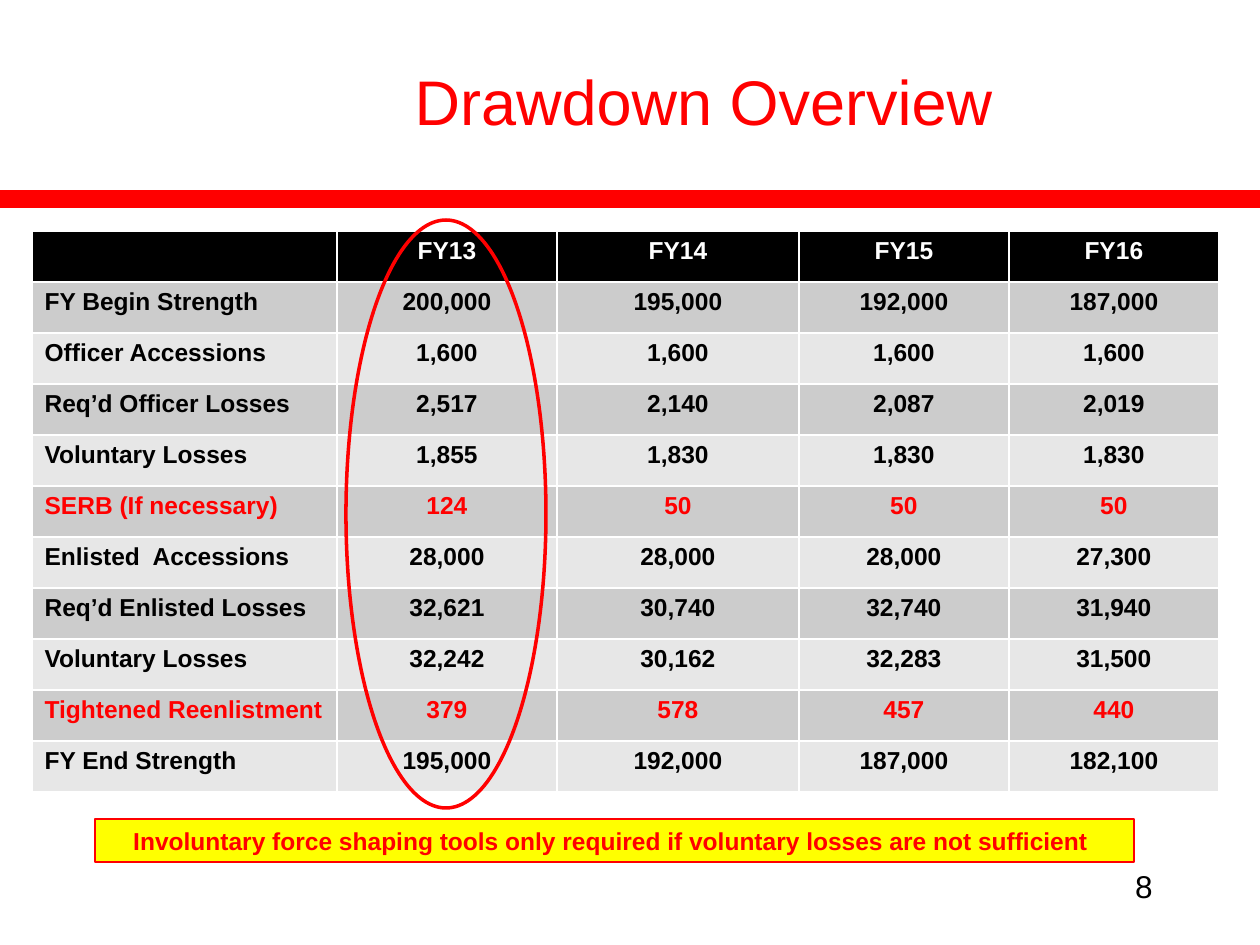
from typing import NamedTuple

from lxml import etree
from pptx import Presentation
from pptx import util as u
from pptx.dml.color import RGBColor
from pptx.enum import shapes, text

RED = RGBColor(0xFF, 0x00, 0x00)
YELLOW = RGBColor(0xFF, 0xFF, 0x00)
BLACK = RGBColor(0x00, 0x00, 0x00)
WHITE = RGBColor(0xFF, 0xFF, 0xFF)
DARK_BAND = RGBColor(0xCC, 0xCC, 0xCC)
LIGHT_BAND = RGBColor(0xE7, 0xE7, 0xE7)

PX_PER_INCH = 126
SLIDE_W, SLIDE_H = 1260, 945
ROW_H = 51
COL_WIDTHS = (305, 220, 242, 210, 210)
A_NS = "http://schemas.openxmlformats.org/drawingml/2006/main"
LEFT, CENTER, RIGHT = (text.PP_ALIGN.LEFT, text.PP_ALIGN.CENTER,
                       text.PP_ALIGN.RIGHT)


class Box(NamedTuple):
    x: int
    y: int
    w: int
    h: int


class Row(NamedTuple):
    label: str
    values: tuple[str, ...]
    color: RGBColor = BLACK


HEADER = Row("", ("FY13", "FY14", "FY15", "FY16"), WHITE)
ROWS = (
    Row("FY Begin Strength", ("200,000", "195,000", "192,000", "187,000")),
    Row("Officer Accessions", ("1,600", "1,600", "1,600", "1,600")),
    Row("Req’d Officer Losses", ("2,517", "2,140", "2,087", "2,019")),
    Row("Voluntary Losses", ("1,855", "1,830", "1,830", "1,830")),
    Row("SERB (If necessary)", ("124", "50", "50", "50"), RED),
    Row("Enlisted  Accessions", ("28,000", "28,000", "28,000", "27,300")),
    Row("Req’d Enlisted Losses", ("32,621", "30,740", "32,740", "31,940")),
    Row("Voluntary Losses", ("32,242", "30,162", "32,283", "31,500")),
    Row("Tightened Reenlistment", ("379", "578", "457", "440"), RED),
    Row("FY End Strength", ("195,000", "192,000", "187,000", "182,100")),
)


def px(n: int) -> u.Emu:
    return u.Emu(round(n * 914400 / PX_PER_INCH))


def emu(box: Box) -> list[u.Emu]:
    return [px(n) for n in box]


def write(tf, content: str, size: int, color: RGBColor, align,
          bold: bool = False) -> None:
    p = tf.paragraphs[0]
    p.alignment = align
    r = p.add_run()
    r.text = content
    fmt = {"name": "Arial", "size": u.Pt(size), "bold": bold}
    for name, value in fmt.items():
        setattr(r.font, name, value)
    r.font.color.rgb = color


def add_title(s, box: Box, content: str) -> None:
    sp = s.shapes.title
    for name, value in zip(("left", "top", "width", "height"), emu(box)):
        setattr(sp, name, value)
    sp.text_frame.vertical_anchor = text.MSO_ANCHOR.MIDDLE
    write(sp.text_frame, content, 36, RED, CENTER)


def add_rule(s, y: int) -> None:
    """Draw the red bar across the full slide width."""
    line = s.shapes.add_connector(shapes.MSO_CONNECTOR.STRAIGHT,
                                  0, px(y), px(SLIDE_W), px(y))
    line.line.color.rgb = RED
    line.line.width = u.Pt(10)
    etree.SubElement(line._element.spPr, f"{{{A_NS}}}effectLst")


def add_strength_table(s, x: int, y: int) -> None:
    rows = (HEADER, *ROWS)
    box = Box(x, y, sum(COL_WIDTHS), ROW_H * len(rows))
    table = s.shapes.add_table(len(rows), len(COL_WIDTHS), *emu(box)).table
    for col, width in zip(table.columns, COL_WIDTHS):
        col.width = px(width)
    for i, row in enumerate(rows):
        table.rows[i].height = px(ROW_H)
        band = BLACK if i == 0 else DARK_BAND if i % 2 else LIGHT_BAND
        for j, content in enumerate((row.label, *row.values)):
            cell = table.cell(i, j)
            cell.fill.solid()
            cell.fill.fore_color.rgb = band
            if content:
                write(cell.text_frame, content, 14, row.color,
                      CENTER if j else LEFT, bold=True)


def add_outlined(s, kind, box: Box, width: float,
                 fill: RGBColor | None = None):
    sp = s.shapes.add_shape(kind, *emu(box))
    sp.shadow.inherit = False
    if fill is None:
        sp.fill.background()
    else:
        sp.fill.solid()
        sp.fill.fore_color.rgb = fill
    sp.line.color.rgb = RED
    sp.line.width = u.Pt(width)
    return sp


def add_page_number(s, box: Box, number: str) -> None:
    tf = s.shapes.add_textbox(*emu(box)).text_frame
    tf.word_wrap = True
    write(tf, number, 18, BLACK, RIGHT)


def main() -> None:
    prs = Presentation()
    prs.slide_width, prs.slide_height = px(SLIDE_W), px(SLIDE_H)
    s = prs.slides.add_slide(prs.slide_layouts[5])
    add_rule(s, 199)
    add_title(s, Box(168, 21, 1071, 158), "Drawdown Overview")
    add_strength_table(s, 32, 231)
    add_page_number(s, Box(903, 861, 262, 63), "8")
    note = add_outlined(s, shapes.MSO_SHAPE.RECTANGLE,
                        Box(95, 819, 1039, 43), 0.75, YELLOW)
    write(note.text_frame,
          "Involuntary force shaping tools only required if "
          "voluntary losses are not sufficient ", 14, RED, CENTER, bold=True)
    add_outlined(s, shapes.MSO_SHAPE.OVAL, Box(346, 220, 200, 588), 2)
    prs.save("out.pptx")


if __name__ == "__main__":
    main()
